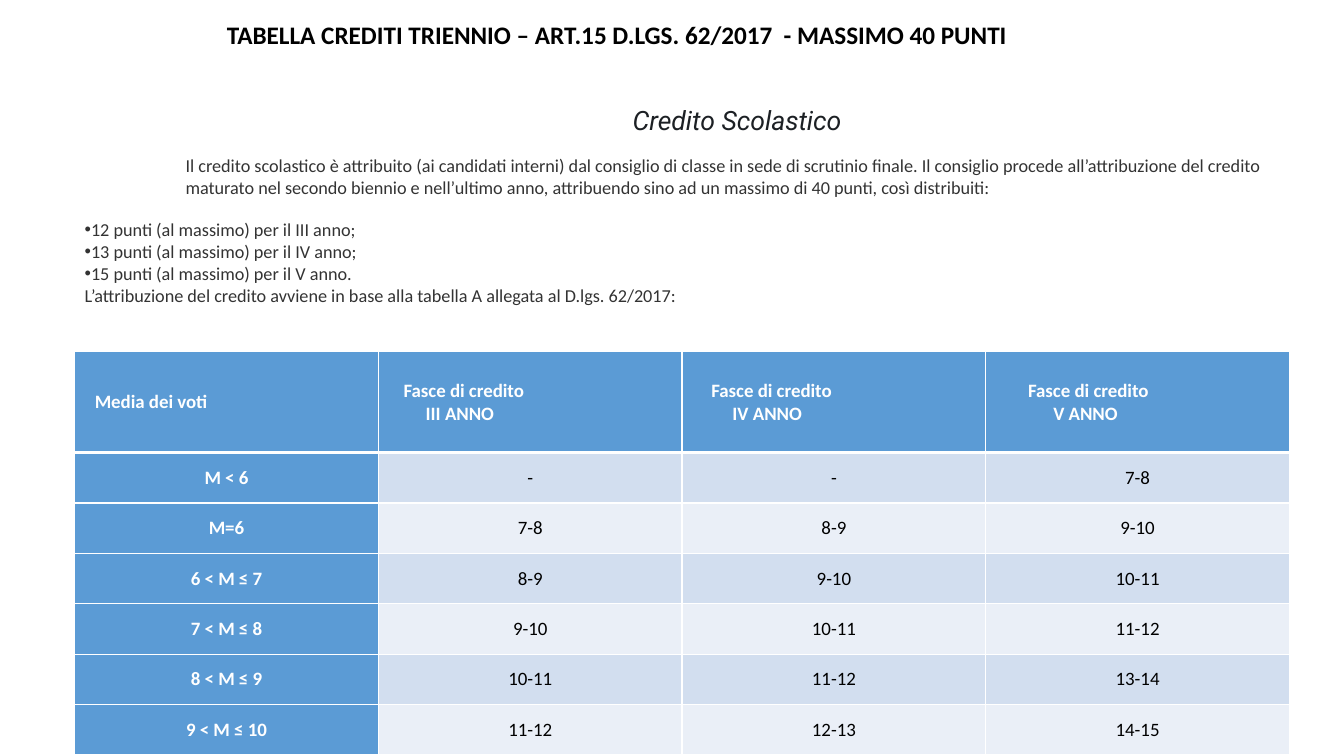
"""Build the slide on school credits for the last three years."""
from dataclasses import dataclass

from lxml import etree
from pptx import Presentation
from pptx import util as u
from pptx.dml.color import RGBColor
from pptx.enum import shapes, text
from pptx.oxml.ns import qn


@dataclass(frozen=True)
class Theme:
    """Colours, fonts and type sizes."""

    body_font: str = "Calibri"
    heading_font: str = "Roboto"
    black: str = "000000"
    white: str = "FFFFFF"
    ink: str = "333333"
    heading: str = "1C2024"
    header_fill: str = "5B9BD5"
    bands: tuple = ("D2DEEF", "EAEFF7")
    title_size: float = 18
    heading_size: float = 19
    body_size: float = 13
    table_size: float = 13.5


THEME = Theme()
BODY = {"name": THEME.body_font, "size": THEME.body_size, "color": THEME.ink}
TITLE = {"name": THEME.body_font, "size": THEME.title_size, "color": THEME.black, "bold": True}
HEADING = {"name": THEME.heading_font, "size": THEME.heading_size,
           "color": THEME.heading, "italic": True}
LABEL = {"name": THEME.body_font, "size": THEME.table_size, "color": THEME.white, "bold": True}
VALUE = {**LABEL, "color": THEME.black, "bold": False}

LEFT, CENTER = text.PP_ALIGN.LEFT, text.PP_ALIGN.CENTER

INTRO = ("Il credito scolastico è attribuito (ai candidati interni) dal consiglio di classe "
         "in sede di scrutinio finale. Il consiglio procede all’attribuzione del credito "
         "maturato nel secondo biennio e nell’ultimo anno, attribuendo sino ad un massimo "
         "di 40 punti, così distribuiti:")
YEAR_LIMITS = [
    "12 punti (al massimo) per il III anno;",
    "13 punti (al massimo) per il IV anno;",
    "15 punti (al massimo) per il V anno.",
]
CLOSING = "L’attribuzione del credito avviene in base alla tabella A allegata al D.lgs. 62/2017:"

HEADERS = [
    [("Media dei voti", 0.2)],
    [("Fasce di credito", 0.25), ("III ANNO", 0.47)],
    [("Fasce di credito", 0.29), ("IV ANNO", 0.5)],
    [("Fasce di credito", 0.42), ("V ANNO", 0.67)],
]
CREDITS = [
    ("M < 6", "-", "-", "7-8"),
    ("M=6", "7-8", "8-9", "9-10"),
    ("6 < M ≤ 7", "8-9", "9-10", "10-11"),
    ("7 < M ≤ 8", "9-10", "10-11", "11-12"),
    ("8 < M ≤ 9", "10-11", "11-12", "13-14"),
    ("9 < M ≤ 10", "11-12", "12-13", "14-15"),
]


def set_all(target, values):
    """Set attributes of an object from a dict."""
    for name, value in values.items():
        setattr(target, name, value)


def paint(fill, color):
    """Give a fill one solid colour."""
    fill.solid()
    fill.fore_color.rgb = RGBColor.from_string(color)


def write(frame, words, style, align=LEFT, indent=0, before=0, bullet=False):
    """Write one paragraph, using the empty first one if there is one."""
    first = frame.paragraphs[0]
    para = frame.add_paragraph() if first.runs else first
    props = para._p.get_or_add_pPr()
    props.set("marL", str(u.Inches(indent)))
    props.set("indent", "0")
    if bullet:
        etree.SubElement(props, qn("a:buFont")).set("typeface", "Arial")
        etree.SubElement(props, qn("a:buChar")).set("char", "•")
    set_all(para, {"alignment": align, "space_before": u.Pt(before)})
    span = para.add_run()
    span.text = words
    values = {**style, "size": u.Pt(style["size"])}
    span.font.color.rgb = RGBColor.from_string(values.pop("color"))
    set_all(span.font, values)


def set_frame(frame, margins, anchor):
    """Set wrapping, insets and anchor of a text frame."""
    sides = ("margin_left", "margin_top", "margin_right", "margin_bottom")
    set_all(frame, dict(zip(sides, map(u.Inches, margins))))
    set_all(frame, {"word_wrap": True, "vertical_anchor": anchor,
                    "auto_size": text.MSO_AUTO_SIZE.SHAPE_TO_FIT_TEXT})


def add_title(page):
    """Add the title line."""
    box = page.shapes.add_textbox(*map(u.Inches, (0.98, 0.14, 10.28, 0.4)))
    set_frame(box.text_frame, (0.1, 0.05, 0.1, 0.05), text.MSO_ANCHOR.TOP)
    write(box.text_frame, "TABELLA CREDITI TRIENNIO – ART.15 D.LGS. 62/2017  - MASSIMO 40 PUNTI",
          TITLE, CENTER)


def add_explanation(page):
    """Add the white panel that explains how credits are given."""
    panel = page.shapes.add_shape(shapes.MSO_SHAPE.RECTANGLE,
                                  *map(u.Inches, (0.59, 0.97, 12.19, 2.49)))
    panel.shadow.inherit = False
    paint(panel.fill, THEME.white)
    panel.line.fill.background()
    frame = panel.text_frame
    set_frame(frame, (0.25, 0.05, 0, 0.42), text.MSO_ANCHOR.MIDDLE)
    write(frame, "Credito Scolastico", HEADING, CENTER, indent=1)
    write(frame, INTRO, BODY, indent=1, before=13.4)
    for index, limit in enumerate(YEAR_LIMITS):
        write(frame, limit, BODY, before=0 if index else 14.6, bullet=True)
    write(frame, CLOSING, BODY)


def add_borders(cell, widths):
    """Draw white cell borders with the given width for each side."""
    props = cell._tc.get_or_add_tcPr()
    for side, width in widths.items():
        line = etree.SubElement(props, qn(f"a:ln{side}"), w=str(u.Pt(width)))
        solid = etree.SubElement(line, qn("a:solidFill"))
        etree.SubElement(solid, qn("a:srgbClr"), val=THEME.white)


def format_cell(cell, fill, top=1, bottom=1):
    """Set the insets, anchor, borders and fill of a cell."""
    set_all(cell, {"margin_left": 0, "margin_top": 0, "margin_right": 0, "margin_bottom": 0,
                   "vertical_anchor": text.MSO_ANCHOR.MIDDLE})
    add_borders(cell, {"L": 1, "R": 1, "T": top, "B": bottom})
    paint(cell.fill, fill)


def add_credit_table(page):
    """Add the table of credit bands by average mark and year."""
    frame = page.shapes.add_table(len(CREDITS) + 1, len(HEADERS),
                                  *map(u.Inches, (0.74, 3.49, 12.05, 4)))
    table = frame.table
    for index, row in enumerate(table.rows):
        row.height = u.Inches(0.5 if index else 1)
    for column, lines in enumerate(HEADERS):
        cell = table.cell(0, column)
        format_cell(cell, THEME.header_fill, bottom=3)
        for words, indent in lines:
            write(cell.text_frame, words, LABEL, indent=indent)
    for row, values in enumerate(CREDITS, start=1):
        band = THEME.bands[(row - 1) % 2]
        for column, words in enumerate(values):
            cell = table.cell(row, column)
            format_cell(cell, band if column else THEME.header_fill, top=3 if row == 1 else 1)
            write(cell.text_frame, words, VALUE if column else LABEL, CENTER)


def main():
    """Build and save the deck."""
    deck = Presentation()
    set_all(deck, {"slide_width": u.Inches(13.33), "slide_height": u.Inches(7.5)})
    page = deck.slides.add_slide(deck.slide_layouts[6])
    add_title(page)
    add_credit_table(page)
    add_explanation(page)
    deck.save("out.pptx")


if __name__ == "__main__":
    main()
